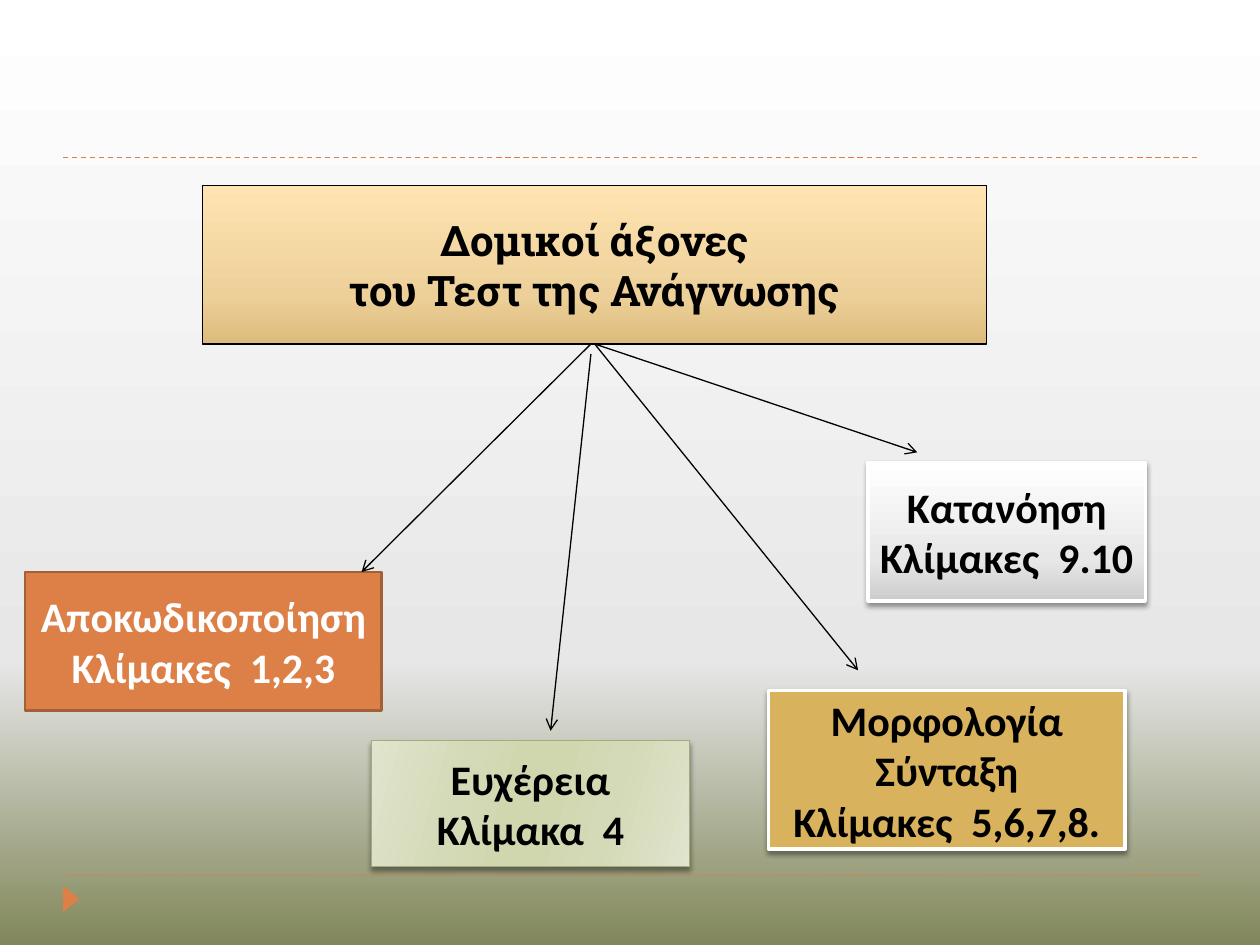
from lxml.etree import SubElement
from pptx import Presentation
from pptx.dml.color import RGBColor
from pptx.enum.dml import MSO_LINE
from pptx.enum.shapes import MSO_CONNECTOR, MSO_SHAPE
from pptx.enum.text import MSO_ANCHOR, PP_ALIGN
from pptx.oxml.ns import qn
from pptx.util import Inches, Pt

THEME = {
    "accent": "DD8047", "accent_edge": "A35F35", "gold": "D8B25C",
    "green_edge": "A5AB81", "black": "000000", "white": "FFFFFF",
    "heading_font": "Roboto Slab", "body_font": "Calibri", "size": 24,
    "background": ([(0, "81875A"), (30, "E7E7E7"), (100, "FFFFFF")], 270),
    "sand": ([(0, "DCBB7C"), (30, "EDD099"), (100, "FFE4B2")], 270),
    "silver": ([(0, "CCCCCC"), (30, "E7E7E7"), (100, "FFFFFF")], 270),
    "green": ([(0, "E0E4CD"), (30, "D4DAB7"), (45, "D0D7AF"),
               (55, "D0D7AF"), (73, "D4DAB7"), (100, "E0E4CD")], 16),
}


def paint(fill, element, paint_value):
    """Fill with a colour, or with (stops, clockwise angle) as a gradient."""
    if isinstance(paint_value, str):
        fill.solid()
        fill.fore_color.rgb = RGBColor.from_string(paint_value)
        return
    stops, angle = paint_value
    fill.gradient()
    fill.gradient_angle = 360 - angle
    stop_list = element.find(".//" + qn("a:gsLst"))
    for old_stop in list(stop_list):
        stop_list.remove(old_stop)
    for position, color in stops:
        stop = SubElement(stop_list, qn("a:gs"), pos=str(position * 1000))
        SubElement(stop, qn("a:srgbClr"), val=color)


def add_line(shapes, start, end, color):
    line = shapes.add_connector(MSO_CONNECTOR.STRAIGHT,
                                *[Inches(value) for value in (*start, *end)])
    line.line.color.rgb = RGBColor.from_string(color)
    line.line.width = Pt(0.75)
    SubElement(line.element.spPr, qn("a:effectLst"))
    return line


presentation = Presentation()
presentation.slide_width, presentation.slide_height = Inches(10), Inches(7.5)
slide = presentation.slides.add_slide(presentation.slide_layouts[6])
shapes = slide.shapes
paint(slide.background.fill, slide.element, THEME["background"])

# Dashed rules and corner marker
for y in (6.95, 1.25):
    rule = add_line(shapes, (0.5, y), (9.5, y), THEME["accent"])
    rule.line.dash_style = MSO_LINE.DASH

marker = shapes.add_shape(MSO_SHAPE.ISOSCELES_TRIANGLE, Inches(0.46),
                          Inches(7.07), Inches(0.21), Inches(0.13))
marker.rotation = 90
marker.shadow.inherit = False
paint(marker.fill, marker.element, THEME["accent"])
marker.line.fill.background()

# Heading and axis boxes: place, text, fill, edge, edge width, font, text colour, shadow
boxes = [
    ((1.61, 1.47, 6.22, 1.26), "Δομικοί άξονες\nτου Τεστ της Ανάγνωσης",
     "sand", "black", 0.75, "heading_font", "black", False),
    ((0.2, 4.54, 2.83, 1.1), "Αποκωδικοποίηση\nΚλίμακες  1,2,3",
     "accent", "accent_edge", 1.5, "body_font", "white", False),
    ((6.1, 5.48, 2.83, 1.26), "Μορφολογία\nΣύνταξη\nΚλίμακες  5,6,7,8.",
     "gold", "white", 2, "body_font", "black", True),
    ((6.89, 3.67, 2.2, 1.1), "Κατανόηση\nΚλίμακες  9.10",
     "silver", "white", 2, "body_font", "black", True),
    ((2.95, 5.88, 2.52, 1), "Ευχέρεια\nΚλίμακα  4",
     "green", "green_edge", 0.75, "body_font", "black", True),
]
for place, text, fill, edge, edge_width, font, text_color, has_shadow in boxes:
    box = shapes.add_shape(MSO_SHAPE.RECTANGLE, *[Inches(value) for value in place])
    box.shadow.inherit = False
    paint(box.fill, box.element, THEME[fill])
    box.line.color.rgb = RGBColor.from_string(THEME[edge])
    box.line.width = Pt(edge_width)
    if has_shadow:
        effects = box.element.spPr.find(qn("a:effectLst"))
        shadow = SubElement(effects, qn("a:outerShdw"), blurRad=str(Pt(3)),
                            dist=str(Pt(2)), dir="5400000", rotWithShape="0")
        shadow_color = SubElement(shadow, qn("a:srgbClr"), val=THEME["black"])
        SubElement(shadow_color, qn("a:alpha"), val="40000")
    frame = box.text_frame
    frame.text = text
    frame.word_wrap = False
    frame.vertical_anchor = MSO_ANCHOR.MIDDLE
    for paragraph in frame.paragraphs:
        paragraph.alignment = PP_ALIGN.CENTER
        for run in paragraph.runs:
            run.font.name = THEME[font]
            run.font.size = Pt(THEME["size"])
            run.font.bold = True
            run.font.color.rgb = RGBColor.from_string(THEME[text_color])

# Arrows from the heading to each axis
arrows = [
    ((4.69, 2.73), (2.87, 4.54)),
    ((4.69, 2.81), (4.37, 5.8)),
    ((4.72, 2.73), (6.81, 5.32)),
    ((4.72, 2.73), (7.28, 3.59)),
]
for start, end in arrows:
    arrow = add_line(shapes, start, end, THEME["black"])
    SubElement(arrow.line._get_or_add_ln(), qn("a:tailEnd"), type="arrow")

presentation.save("out.pptx")
